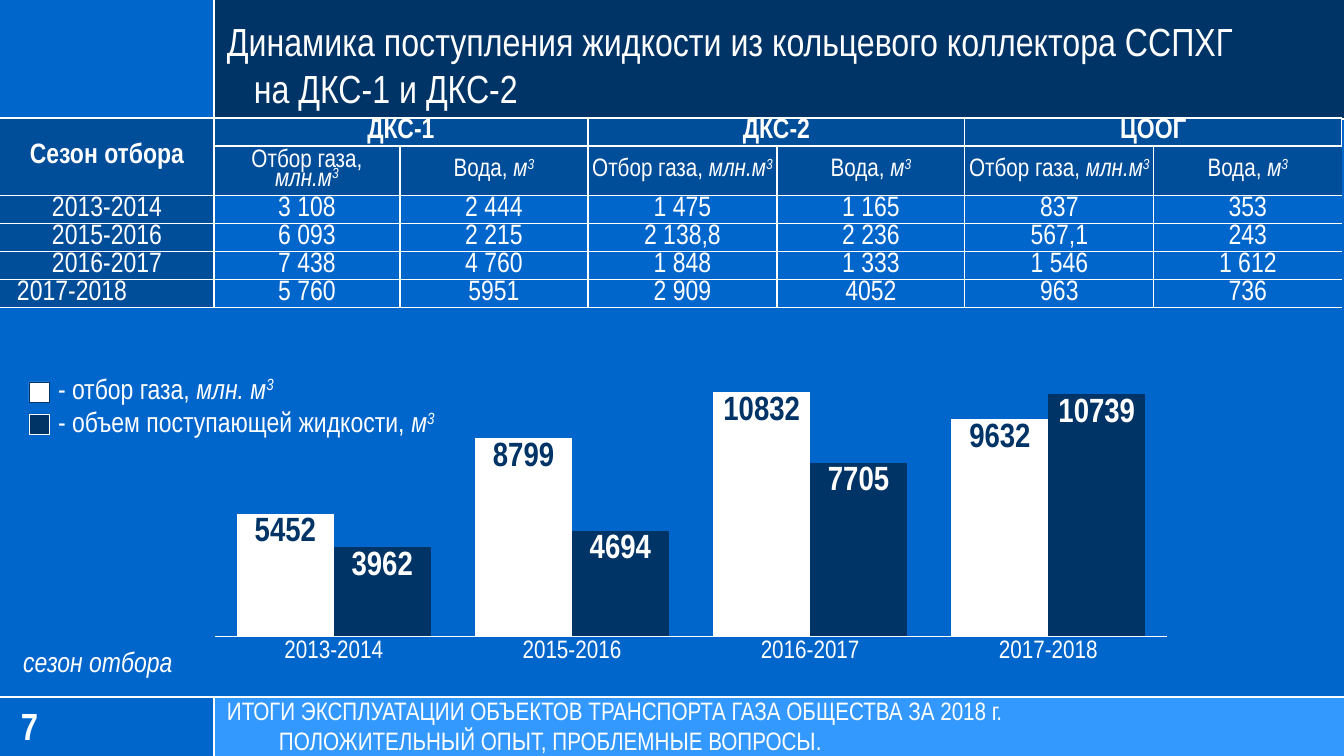
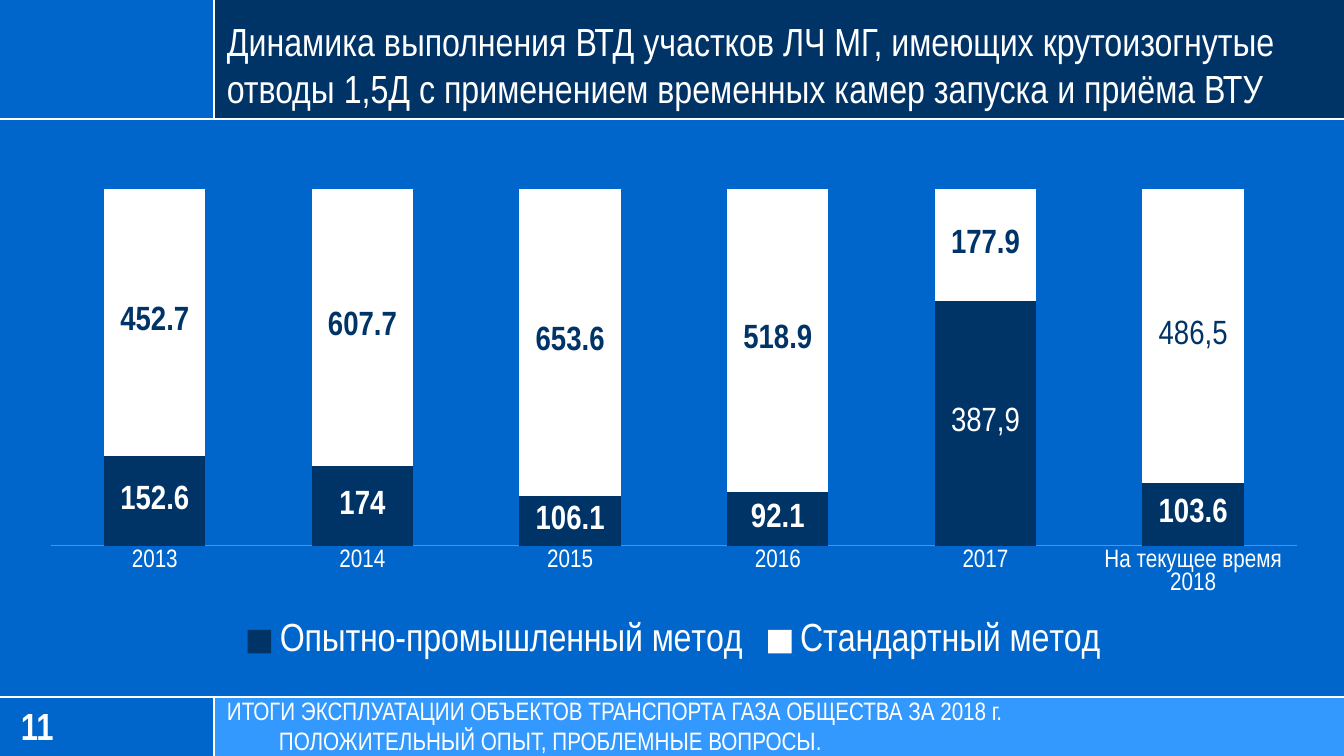
from pptx import Presentation
from pptx.chart.data import CategoryChartData
from pptx.dml.color import RGBColor
from pptx.enum import chart as ch, shapes, text
from pptx.oxml import parse_xml
from pptx.oxml.ns import nsdecls, qn
from pptx.util import Pt

W, H = 1344, 756
PX = 12192000 / W
FONT = "Arial Narrow"
COLORS = {"white": "FFFFFF", "navy": "003366", "blue": "0066CC",
          "sky": "3399FF", "header": "004D9A", "grey": "868686"}
SIDE, TOP, BOTTOM = 214, 119, 697  # edges of the side column and the bands
FOOTER = ["ИТОГИ ЭКСПЛУАТАЦИИ ОБЪЕКТОВ ТРАНСПОРТА ГАЗА ОБЩЕСТВА ЗА 2018 г.",
          "ПОЛОЖИТЕЛЬНЫЙ ОПЫТ, ПРОБЛЕМНЫЕ ВОПРОСЫ."]
CENTER, LEFT = text.PP_ALIGN.CENTER, text.PP_ALIGN.LEFT
MIDDLE = text.MSO_ANCHOR.MIDDLE


def px(n):
    return round(n * PX)


def rgb(name):
    return RGBColor.from_string(COLORS[name])


def style_font(font, size, color="white", bold=False):
    font.name, font.size, font.bold = FONT, Pt(size), bold
    font.color.rgb = rgb(color)


def write(p, runs, size, bold=False, indent=0):
    """Runs are a string or (text, flags) pairs: i italic, s superscript."""
    if indent:
        pPr = p._p.get_or_add_pPr()
        pPr.set("marL", str(px(indent)))
        pPr.set("indent", "0")
    for words, flags in [(runs, "")] if isinstance(runs, str) else runs:
        r = p.add_run()
        r.text = words
        style_font(r.font, size, bold=bold)
        r.font.italic = "i" in flags
        if "s" in flags:
            r._r.get_or_add_rPr().set("baseline", "30000")


class Deck:
    def __init__(self):
        self.prs = Presentation()
        self.prs.slide_width, self.prs.slide_height = px(W), px(H)
        self.s = None

    def slide(self, title, number, indent=0):
        self.s = self.prs.slides.add_slide(self.prs.slide_layouts[6])
        # Bands and rules
        self.rect(SIDE, 0, W - SIDE, TOP, "navy")
        self.rect(SIDE, BOTTOM, W - SIDE, H - BOTTOM, "sky")
        self.rect(0, 0, SIDE, TOP, "blue")
        self.rect(0, BOTTOM, SIDE, H - BOTTOM, "blue")
        self.line(SIDE, H, SIDE, 0)
        self.rect(0, TOP, W, BOTTOM - TOP, "blue")
        for y in (TOP, BOTTOM):
            self.line(W, y, 0, y)
        # Footer, title and slide number
        band = H - BOTTOM
        self.text(SIDE, BOTTOM - 1, W - SIDE, band, FOOTER, 18, anchor=MIDDLE,
                  inset=(13, 7), indent=52)
        self.text(SIDE, 0, W - SIDE, TOP - 1, title, 28,
                  anchor=text.MSO_ANCHOR.BOTTOM, inset=(13, 7), indent=indent)
        self.text(0, BOTTOM - 1, SIDE, band, [number], 27, bold=True,
                  anchor=MIDDLE, inset=(21, 7))

    def rect(self, x, y, w, h, fill, line=None):
        sp = self.s.shapes.add_shape(shapes.MSO_SHAPE.RECTANGLE,
                                     px(x), px(y), px(w), px(h))
        sp.shadow.inherit = False
        sp.fill.solid()
        sp.fill.fore_color.rgb = rgb(fill)
        if line:
            sp.line.color.rgb = rgb(line)
            sp.line.width = Pt(0.25)
        else:
            sp.line.fill.background()

    def line(self, x1, y1, x2, y2):
        cn = self.s.shapes.add_connector(shapes.MSO_CONNECTOR.STRAIGHT,
                                         px(x1), px(y1), px(x2), px(y2))
        cn.line.color.rgb = rgb("white")
        cn.line.width = Pt(1.25)
        cn._element.spPr.append(parse_xml(f"<a:effectLst {nsdecls('a')}/>"))

    def text(self, x, y, w, h, lines, size, bold=False, wrap=True,
             anchor=text.MSO_ANCHOR.TOP, inset=(10, 5), indent=0):
        """One paragraph a line; indent moves the lines after the first."""
        tf = self.s.shapes.add_textbox(px(x), px(y), px(w), px(h)).text_frame
        tf.word_wrap, tf.vertical_anchor = wrap, anchor
        tf.margin_left, tf.margin_top = px(inset[0]), px(inset[1])
        tf.margin_right, tf.margin_bottom = px(13), px(inset[1])
        for i, runs in enumerate(lines):
            p = tf.add_paragraph() if i else tf.paragraphs[0]
            write(p, runs, size, bold, indent if i else 0)

    def table(self, x, y, widths, heights, rows, header_rows):
        tb = self.s.shapes.add_table(len(rows), len(widths), px(x), px(y),
                                     px(sum(widths)), px(sum(heights))).table
        tb.first_row = tb.horz_banding = False
        for col, w in zip(tb.columns, widths):
            col.width = px(w)
        for row, h in zip(tb.rows, heights):
            row.height = px(h)
        for i, row in enumerate(rows):
            for j, runs in enumerate(row):
                cell = tb.cell(i, j)
                cell.margin_left = cell.margin_right = px(4)
                cell.margin_top, cell.margin_bottom = px(1), 0
                cell.vertical_anchor = MIDDLE
                p = cell.text_frame.paragraphs[0]
                p.alignment, p.line_spacing = CENTER, 0.8
                write(p, runs, 18 if i == 1 and j else 20,
                      bold=i < header_rows and (i == 0 or j == 0))
                self.borders(cell, j > 0, j < len(widths) - 1)
                cell.fill.solid()
                head = i < header_rows or j == 0
                cell.fill.fore_color.rgb = rgb("header" if head else "blue")
        return tb

    def borders(self, cell, left, right):
        tcPr = cell._tc.get_or_add_tcPr()
        for side, shown in (("L", left), ("R", right), ("T", True), ("B", True)):
            paint = (f'<a:solidFill><a:srgbClr val="{COLORS["white"]}"/>'
                     "</a:solidFill>" if shown else "<a:noFill/>")
            tcPr.append(parse_xml(
                f'<a:ln{side} {nsdecls("a")} w="12700">{paint}</a:ln{side}>'))

    def chart(self, x, y, w, h, kind, cats, series, gap, overlap, layout,
              axis="white", label_pos=None):
        """Series are (name, values, fill, label colour)."""
        data = CategoryChartData()
        data.categories = cats
        for name, values, *_ in series:
            data.add_series(name, values)
        c = self.s.shapes.add_chart(kind, px(x), px(y), px(w), px(h), data).chart
        c.has_title = c.has_legend = False
        style_font(c.font, 18)
        # Axes
        c.value_axis.visible = False
        c.value_axis.has_major_gridlines = False
        c.value_axis.minimum_scale = 0
        cat = c.category_axis
        cat.major_tick_mark = ch.XL_TICK_MARK.NONE
        cat.format.line.color.rgb = rgb(axis)
        cat.format.line.width = Pt(0.75)
        # Bars and labels
        plot = c.plots[0]
        plot.vary_by_categories = False
        plot.gap_width, plot.overlap = gap, overlap
        for ser, (_, _, fill, color) in zip(plot.series, series):
            ser.format.fill.solid()
            ser.format.fill.fore_color.rgb = rgb(fill)
            labels = ser.data_labels
            labels.show_value = True
            style_font(labels.font, 24, color, True)
            if label_pos is not None:
                labels.position = label_pos
        # Inner plot area as shares of the chart
        area = c._chartSpace.chart.plotArea
        for old in area.findall(qn("c:layout")):
            area.remove(old)
        sizes = "".join(f'<c:{k} val="{v}"/>' for k, v in zip("xywh", layout))
        area.insert(0, parse_xml(
            f'<c:layout {nsdecls("c")}><c:manualLayout>'
            '<c:layoutTarget val="inner"/><c:xMode val="edge"/>'
            f'<c:yMode val="edge"/>{sizes}</c:manualLayout></c:layout>'))
        return c

    def point_label(self, chart, ser, point, words, color):
        tf = chart.plots[0].series[ser].points[point].data_label.text_frame
        tf.text = words
        style_font(tf.paragraphs[0].runs[0].font, 24, color)


def liquid_slide(deck):
    deck.slide(["Динамика поступления жидкости из кольцевого коллектора ССПХГ",
                "на ДКС-1 и ДКС-2"], "7", indent=27)
    # Table of gas and water by season
    gas = [("Отбор газа, ", ""), ("млн.м", "i"), ("3", "is")]
    water = [("Вода, ", ""), ("м", "i"), ("3", "is")]
    rows = [
        ["Сезон отбора", "ДКС-1", [], "ДКС-2", [], "ЦООГ", []],
        [[]] + [gas, water] * 3,
        ["2013-2014", "3 108", "2 444", "1 475", "1 165", "837", "353"],
        ["2015-2016", "6 093", "2 215", "2 138,8", "2 236", "567,1", "243"],
        ["2016-2017", "7 438", "4 760", "1 848", "1 333", "1 546", "1 612"],
        ["2017-2018", "5 760", "5951", "2 909", "4052", "963", "736"],
    ]
    tb = deck.table(0, 118, [SIDE, 186, 188, 189, 188, 189, 188],
                    [28, 48] + [27] * 4, rows, header_rows=2)
    tb.cell(0, 0).merge(tb.cell(1, 0))
    for j in (1, 3, 5):
        tb.cell(0, j).merge(tb.cell(0, j + 1))
    last_season = tb.cell(5, 0)
    last_season.margin_left = px(17)
    last_season.text_frame.paragraphs[0].alignment = LEFT
    # Chart of totals
    c = deck.chart(0, 366, 1342, 330, ch.XL_CHART_TYPE.COLUMN_CLUSTERED,
                   [row[0] for row in rows[2:]],
                   [("Series 1", (5452, 8799, 10832, 9632), "white", "navy"),
                    ("Series 2", (3962, 4694, 7705, 10739), "navy", "white")],
                   46, 0, (0.16, 0, 0.71, 0.82),
                   label_pos=ch.XL_LABEL_POSITION.INSIDE_END)
    c.value_axis.maximum_scale = 12000
    # Axis caption and key
    deck.text(13, 640, 211, 32, [[("сезон отбора", "i")]], 20, wrap=False)
    deck.text(48, 366, 428, 76, [
        [("- отбор газа, ", ""), ("млн. м", "i"), ("3", "is")],
        [("- объем поступающей жидкости, ", ""), ("м", "i"), ("3", "is")],
    ], 20, wrap=False)
    deck.rect(29, 382, 20, 20, "white", "navy")
    deck.rect(29, 414, 20, 20, "navy", "white")


def inspection_slide(deck):
    deck.slide(["Динамика выполнения ВТД участков ЛЧ МГ, имеющих крутоизогнутые "
                "отводы 1,5Д с применением временных камер запуска и приёма ВТУ"],
               "11")
    c = deck.chart(25, 179, 1298, 489, ch.XL_CHART_TYPE.COLUMN_STACKED_100,
                   ["2013", "2014", "2015", "2016", "2017",
                    "На текущее время 2018"],
                   [("Опытно-промышленный метод",
                     (152.6, 174, 106.1, 92.1, 387.9, 103.6), "navy", "white"),
                    ("Стандартный метод",
                     (452.7, 607.7, 653.6, 518.9, 177.9, 486.5), "white", "navy")],
                   105, 100, (0.02, 0.02, 0.96, 0.73), axis="grey")
    deck.point_label(c, 0, 4, "387,9", "white")
    deck.point_label(c, 1, 5, "486,5", "navy")
    # Legend
    c.has_legend = True
    c.legend.position = ch.XL_LEGEND_POSITION.BOTTOM
    c.legend.include_in_layout = False
    style_font(c.legend.font, 28)


def main():
    deck = Deck()
    liquid_slide(deck)
    inspection_slide(deck)
    deck.prs.save("out.pptx")


if __name__ == "__main__":
    main()
